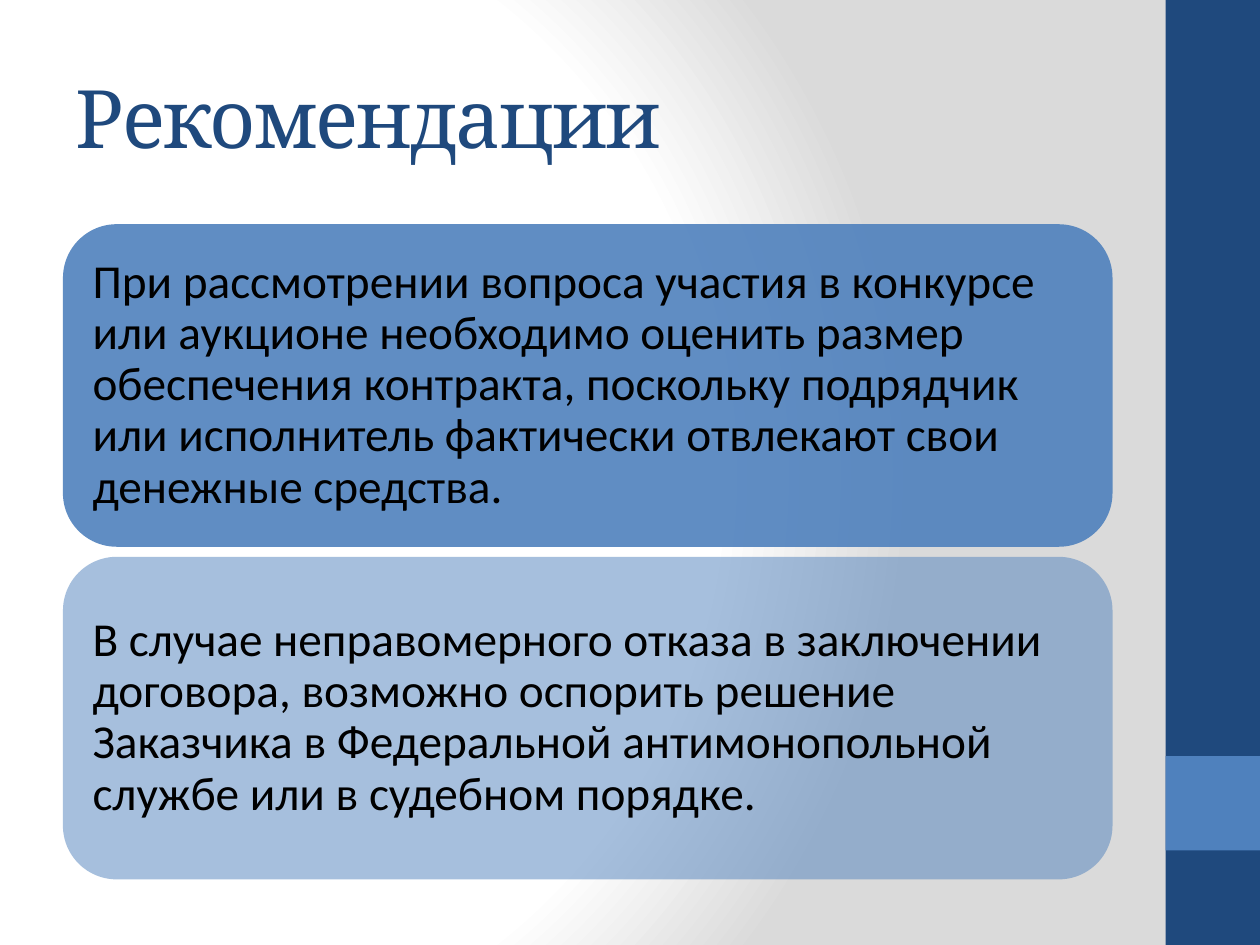
"""Build a slide of recommendations: a title, two rounded cards and a side rail."""
import pptx
import pptx.dml.color
import pptx.enum.shapes
import pptx.enum.text
import pptx.oxml
import pptx.oxml.ns
import pptx.util

THEME = {
    "navy": "1F497D",
    "blue": "4F81BD",
    "ink": "000000",
    "backdrop": ((0, "FFFFFF"), (75, "FFFFFF"), (100, "DADADA")),
    "title": {"name": "Cambria", "size": pptx.util.Pt(46)},
    "body": {"name": "Calibri", "size": pptx.util.Pt(27)},
}
WIDTH, HEIGHT = pptx.util.Inches(10), pptx.util.Inches(7.5)
LEFT, CONTENT_WIDTH = 5, 83.3
RAIL_LEFT, RAIL_WIDTH = 92.5, 7.5
CARD_TOP, CARD_HEIGHT, CARD_PITCH = 23.73, 34.13, 35.2
CARDS = (
    ("При рассмотрении вопроса участия в конкурсе или аукционе необходимо оценить "
     "размер обеспечения контракта, поскольку подрядчик или исполнитель фактически "
     "отвлекают свои денежные средства.", 90),
    ("В случае неправомерного отказа в заключении договора, возможно оспорить решение "
     "Заказчика в Федеральной антимонопольной службе или в судебном порядке.", 50),
)


def place(left, top, width, height):
    """Turn percentages of the slide into lengths."""
    return (int(WIDTH * left / 100), int(HEIGHT * top / 100),
            int(WIDTH * width / 100), int(HEIGHT * height / 100))


def set_values(target, values):
    """Set each format value on the target."""
    for name, value in values.items():
        setattr(target, name, value)


def paint_background(slide):
    """Fill the slide with the circular gradient of the theme."""
    slide.background.fill.gradient()
    gradient = slide.element.find(".//" + pptx.oxml.ns.qn("a:gradFill"))
    stops = "".join(f'<a:gs pos="{share * 1000}"><a:srgbClr val="{color}"/></a:gs>'
                    for share, color in THEME["backdrop"])
    gradient[:] = pptx.oxml.parse_xml(
        f'<a:gradFill {pptx.oxml.ns.nsdecls("a")}><a:gsLst>{stops}</a:gsLst>'
        '<a:path path="circle"><a:fillToRect l="20000" t="50000" r="100000" b="50000"/>'
        '</a:path></a:gradFill>')[:]


def add_block(slide, kind, area, color, opacity=100):
    """Add a borderless filled shape."""
    block = slide.shapes.add_shape(kind, *place(*area))
    block.shadow.inherit = False
    block.line.fill.background()
    block.fill.solid()
    block.fill.fore_color.rgb = pptx.dml.color.RGBColor.from_string(color)
    if opacity < 100:
        tint = block.element.spPr.find(".//" + pptx.oxml.ns.qn("a:srgbClr"))
        tint.append(pptx.oxml.parse_xml(
            f'<a:alpha {pptx.oxml.ns.nsdecls("a")} val="{opacity * 1000}"/>'))
    return block


def write(box, text, style, color, inset, line_spacing=1.0):
    """Write one left-aligned paragraph, centred vertically in the box."""
    frame = box.text_frame
    sides = ("left", "top", "right", "bottom")
    set_values(frame, {f"margin_{side}": pptx.util.Inches(inset) for side in sides})
    set_values(frame, {"word_wrap": True,
                       "vertical_anchor": pptx.enum.text.MSO_ANCHOR.MIDDLE})
    para = frame.paragraphs[0]
    set_values(para, {"alignment": pptx.enum.text.PP_ALIGN.LEFT,
                      "line_spacing": line_spacing})
    span = para.add_run()
    span.text = text
    set_values(span.font, style)
    span.font.color.rgb = pptx.dml.color.RGBColor.from_string(color)
    return span


def add_title(slide, text):
    """Add the title with slightly tightened letters."""
    box = slide.shapes.add_textbox(*place(LEFT, 4, CONTENT_WIDTH, 16.67))
    span = write(box, text, THEME["title"], THEME["navy"], 0.1)
    span.font.fill.solid()
    span.font.color.rgb = pptx.dml.color.RGBColor.from_string(THEME["navy"])
    span.font._element.set("spc", "-100")


def add_card(slide, row, text, opacity):
    """Add a rounded card in the given row."""
    area = (LEFT, CARD_TOP + row * CARD_PITCH, CONTENT_WIDTH, CARD_HEIGHT)
    card = add_block(slide, pptx.enum.shapes.MSO_SHAPE.ROUNDED_RECTANGLE, area,
                     THEME["blue"], opacity)
    write(card, text, THEME["body"], THEME["ink"], 0.11, 0.9)


def main():
    """Build and save the deck."""
    deck = pptx.Presentation()
    set_values(deck, {"slide_width": WIDTH, "slide_height": HEIGHT})
    page = deck.slides.add_slide(deck.slide_layouts[6])
    paint_background(page)
    for top, height, color in ((0, 100, THEME["navy"]), (80, 10, THEME["blue"])):
        add_block(page, pptx.enum.shapes.MSO_SHAPE.RECTANGLE,
                  (RAIL_LEFT, top, RAIL_WIDTH, height), color)
    add_title(page, "Рекомендации")
    for row, (text, opacity) in enumerate(CARDS):
        add_card(page, row, text, opacity)
    deck.save("out.pptx")


if __name__ == "__main__":
    main()
